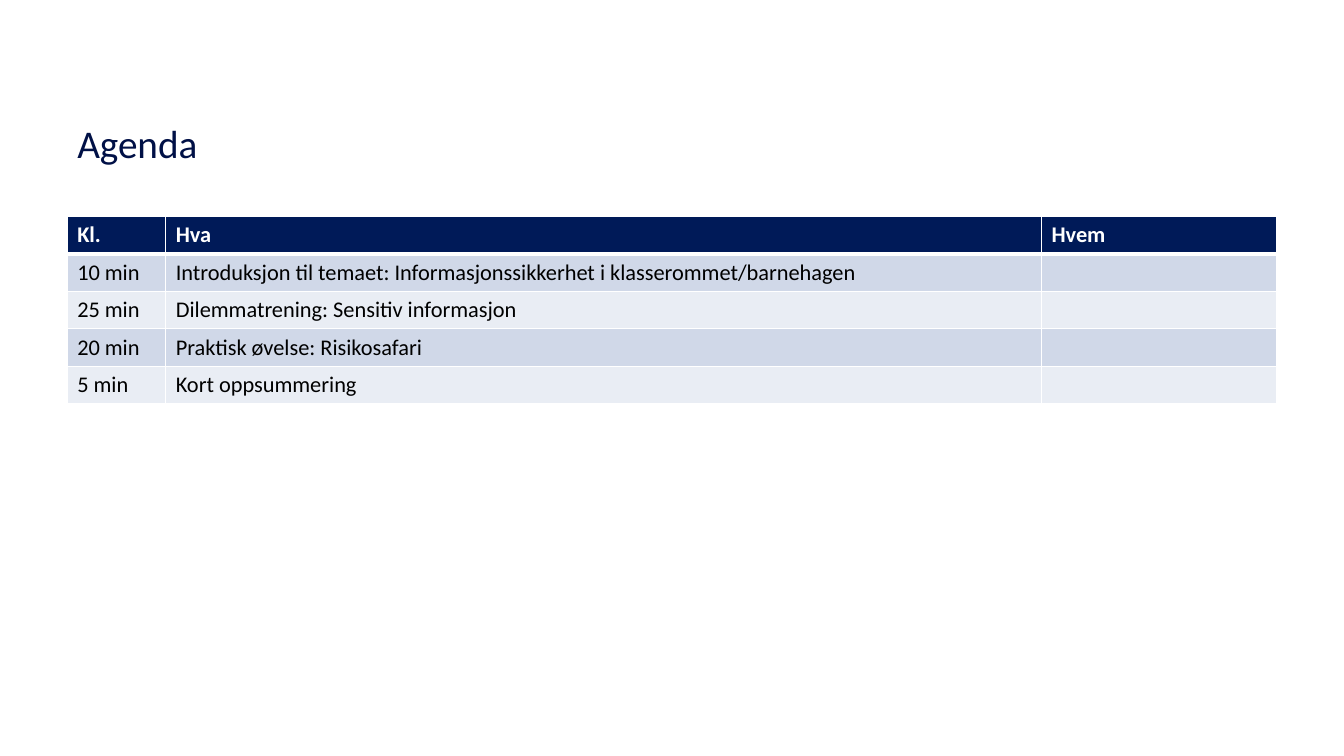
from lxml.etree import SubElement
from pptx import Presentation
from pptx.dml.color import RGBColor
from pptx.enum.text import MSO_ANCHOR
from pptx.oxml.ns import qn
from pptx.util import Pt

TITLE = "Agenda"
AGENDA = [
    ("Kl.", "Hva", "Hvem"),
    ("10 min", "Introduksjon til temaet: Informasjonssikkerhet i klasserommet/barnehagen", ""),
    ("25 min", "Dilemmatrening: Sensitiv informasjon", ""),
    ("20 min", "Praktisk øvelse: Risikosafari", ""),
    ("5 min", "Kort oppsummering", ""),
]
COLORS = {"title": "001046", "header": "001A58", "odd": "D0D8E8",
          "even": "E9EDF4", "text": "000000", "white": "FFFFFF"}
FONT = "Calibri"
LEFT, WIDTH = 48, 864
TITLE_TOP, TITLE_HEIGHT = 57.6, 89.3
TABLE_TOP, ROW_HEIGHT = 154.4, 26.6
COL_WIDTHS = (70.4, 625.6, 168)


def rgb(name):
    return RGBColor.from_string(COLORS[name])


def write(tf, text, size=16, color="text", bold=False):
    p = tf.paragraphs[0]
    if not text:
        # An empty cell still takes its line height from the end mark
        SubElement(p._p, qn("a:endParaRPr"), sz=str(size * 100))
        return
    r = p.add_run()
    r.text = text
    r.font.name, r.font.size, r.font.bold = FONT, Pt(size), bold
    r.font.color.rgb = rgb(color)


def set_borders(cell, bottom=1, top=1):
    tc_pr = cell._tc.get_or_add_tcPr()
    widths = {"lnL": 1, "lnR": 1, "lnT": top, "lnB": bottom}
    for i, (side, width) in enumerate(widths.items()):
        ln = SubElement(tc_pr, qn(f"a:{side}"), w=str(Pt(width)))
        fill = SubElement(ln, qn("a:solidFill"))
        SubElement(fill, qn("a:srgbClr"), val=COLORS["white"])
        tc_pr.insert(i, ln)  # borders come before the cell fill


prs = Presentation()
prs.slide_width, prs.slide_height = Pt(960), Pt(540)
s = prs.slides.add_slide(prs.slide_layouts[5])

title = s.shapes.title
title.left, title.top = Pt(LEFT), Pt(TITLE_TOP)
title.width, title.height = Pt(WIDTH), Pt(TITLE_HEIGHT)
title.text_frame.vertical_anchor = MSO_ANCHOR.MIDDLE
title.text_frame.paragraphs[0].alignment = 1
write(title.text_frame, TITLE, size=28, color="title")

table = s.shapes.add_table(len(AGENDA), len(COL_WIDTHS), Pt(LEFT), Pt(TABLE_TOP),
                           Pt(WIDTH), Pt(ROW_HEIGHT * len(AGENDA))).table
for column, width in zip(table.columns, COL_WIDTHS):
    column.width = Pt(width)
for i, texts in enumerate(AGENDA):
    table.rows[i].height = Pt(ROW_HEIGHT)
    header = i == 0
    fill = "header" if header else "odd" if i % 2 else "even"
    for j, text in enumerate(texts):
        cell = table.cell(i, j)
        cell.fill.solid()
        cell.fill.fore_color.rgb = rgb(fill)
        set_borders(cell, bottom=3 if header else 1, top=3 if i == 1 else 1)
        write(cell.text_frame, text, color="white" if header else "text", bold=header)

prs.save("out.pptx")
